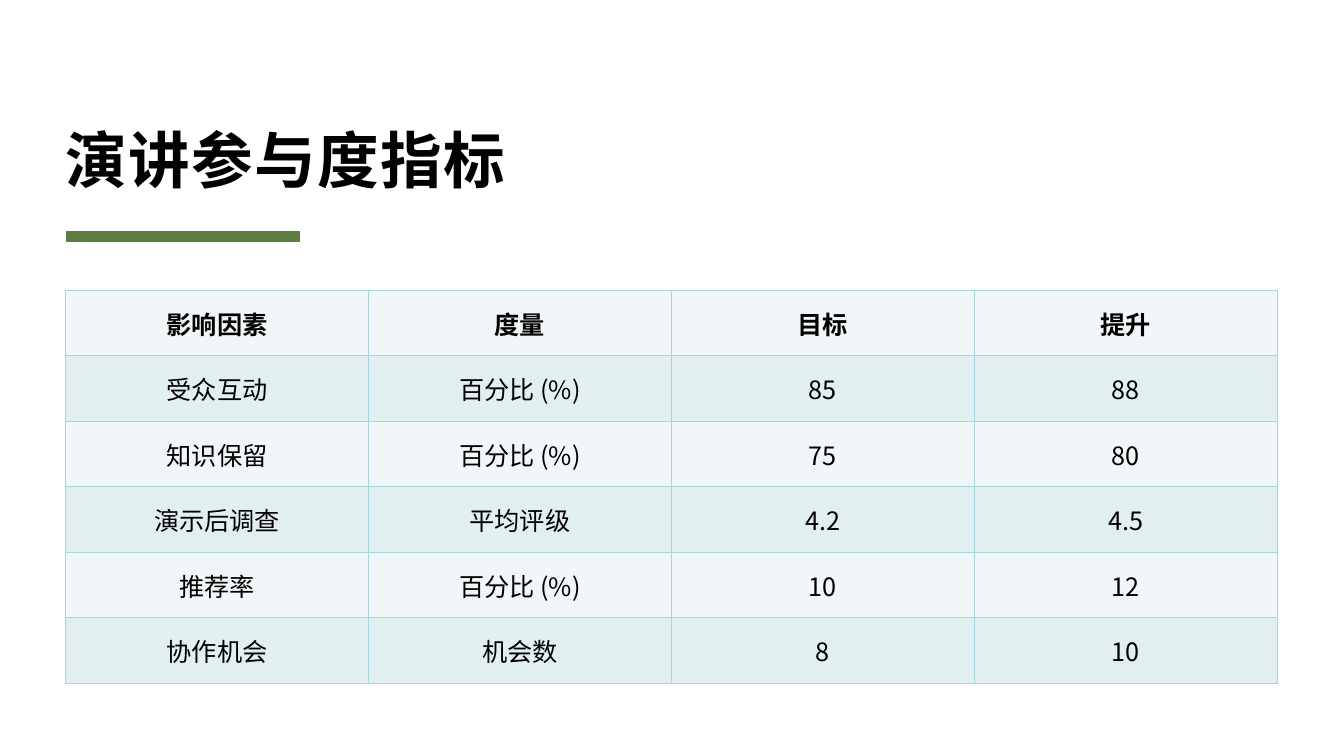
import dataclasses

import lxml.etree
import pptx
import pptx.dml.color
import pptx.enum.shapes
import pptx.enum.text
import pptx.oxml.ns
import pptx.util

FONT = "Noto Sans CJK SC"
COLORS = {
    "text": "000000",
    "accent": "5D7D40",
    "border": "A9D4DB",
    "light_row": "F1F7F8",
    "dark_row": "E2EFF1",
}
ALIGN = pptx.enum.text.PP_ALIGN
ANCHOR = pptx.enum.text.MSO_ANCHOR

# Page grid, in inches
SLIDE_WIDTH, SLIDE_HEIGHT = 13.33, 7.5
MARGIN = 0.65
COLUMN, ROW = 3.005, 0.65
TABLE_TOP = 2.88


@dataclasses.dataclass(frozen=True)
class Metric:
    factor: str
    measure: str
    target: str
    gain: str


HEADINGS = Metric("影响因素", "度量", "目标", "提升")
METRICS = [
    Metric("受众互动", "百分比 (%)", "85", "88"),
    Metric("知识保留", "百分比 (%)", "75", "80"),
    Metric("演示后调查", "平均评级", "4.2", "4.5"),
    Metric("推荐率", "百分比 (%)", "10", "12"),
    Metric("协作机会", "机会数", "8", "10"),
]


def inches(value: float) -> int:
    return pptx.util.Inches(value)


def color(name: str) -> pptx.dml.color.RGBColor:
    return pptx.dml.color.RGBColor.from_string(COLORS[name])


def add_xml(parent, tag: str, **attributes: str):
    return lxml.etree.SubElement(parent, pptx.oxml.ns.qn(tag), attributes)


def write(frame, text: str, *, size: float, bold: bool = False, align=ALIGN.LEFT,
          line_spacing: float = 1.0, tracking: float = 0) -> None:
    paragraph = frame.paragraphs[0]
    paragraph.alignment = align
    paragraph.line_spacing = line_spacing
    run = paragraph.add_run()
    run.text = text
    run.font.size = pptx.util.Pt(size)
    run.font.bold = bold
    run.font.name = FONT
    run.font.color.rgb = color("text")
    properties = run.font._element
    add_xml(properties, "a:ea", typeface=FONT)
    if tracking:
        properties.set("spc", str(round(tracking * 100)))


def add_title(slide, text: str) -> None:
    title = slide.shapes.title
    title.left, title.top = inches(MARGIN), inches(0.64)
    title.width, title.height = inches(12), inches(1.3)
    frame = title.text_frame
    frame.margin_left = frame.margin_right = frame.margin_top = frame.margin_bottom = 0
    frame.word_wrap = True
    frame.auto_size = pptx.enum.text.MSO_AUTO_SIZE.NONE
    frame.vertical_anchor = ANCHOR.BOTTOM
    write(frame, text, size=44, bold=True, line_spacing=0.8, tracking=1)


def add_accent(slide) -> None:
    accent = slide.shapes.add_connector(
        pptx.enum.shapes.MSO_CONNECTOR.STRAIGHT,
        inches(MARGIN), inches(2.35), inches(2.98), inches(2.35))
    accent.line.color.rgb = color("accent")
    accent.line.width = pptx.util.Pt(8)
    add_xml(accent._element.spPr, "a:effectLst")


def add_borders(cell) -> None:
    properties = cell._tc.get_or_add_tcPr()
    for position, side in enumerate(("a:lnL", "a:lnR", "a:lnT", "a:lnB")):
        border = add_xml(properties, side, w=str(pptx.util.Pt(1)))
        add_xml(add_xml(border, "a:solidFill"), "a:srgbClr", val=COLORS["border"])
        properties.insert(position, border)  # borders come before the fill


def add_metrics(slide, rows: list[Metric]) -> None:
    columns = len(dataclasses.fields(Metric))
    table = slide.shapes.add_table(
        len(rows), columns, inches(MARGIN), inches(TABLE_TOP),
        inches(COLUMN * columns), inches(ROW * len(rows))).table
    table.first_row = table.horz_banding = False
    for row_index, metric in enumerate(rows):
        for column_index, value in enumerate(dataclasses.astuple(metric)):
            cell = table.cell(row_index, column_index)
            cell.vertical_anchor = ANCHOR.MIDDLE
            cell.fill.solid()
            cell.fill.fore_color.rgb = color("dark_row" if row_index % 2 else "light_row")
            add_borders(cell)
            write(cell.text_frame, value, size=18, bold=row_index == 0, align=ALIGN.CENTER)


def main() -> None:
    deck = pptx.Presentation()
    deck.slide_width, deck.slide_height = inches(SLIDE_WIDTH), inches(SLIDE_HEIGHT)
    slide = deck.slides.add_slide(deck.slide_layouts.get_by_name("Title Only"))

    # Heading and its underline
    add_accent(slide)
    add_title(slide, "演讲参与度指标")

    # Table of metrics
    add_metrics(slide, [HEADINGS, *METRICS])
    deck.save("out.pptx")


if __name__ == "__main__":
    main()
